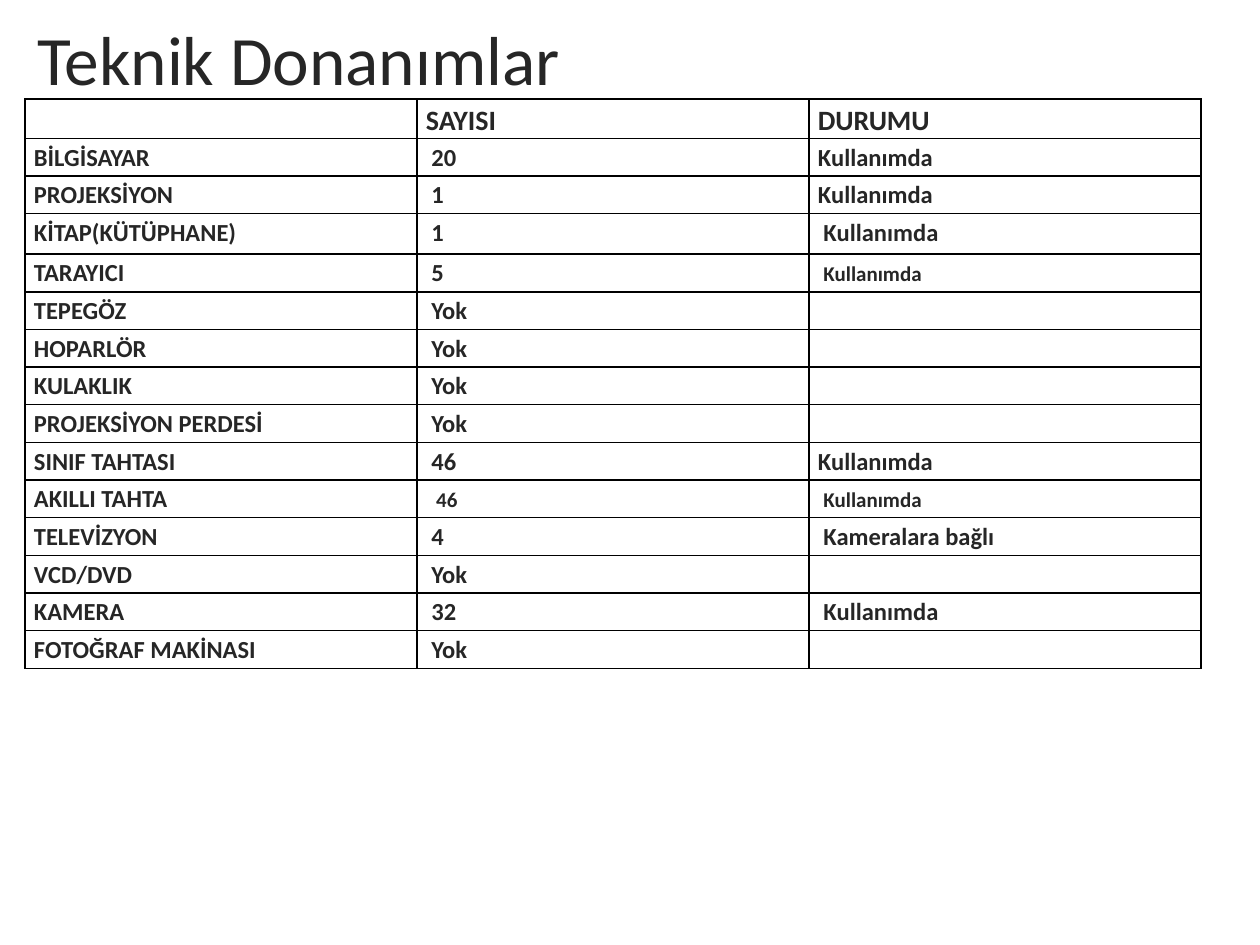
from lxml import etree
from pptx import Presentation
from pptx.dml.color import RGBColor
from pptx.enum.text import MSO_ANCHOR
from pptx.oxml.ns import qn
from pptx.util import Pt

MIDDLE = MSO_ANCHOR.MIDDLE
FONT = "Calibri"
TEXT_COLOR = "262626"
BORDER_COLOR = "000000"
HEADER_SIZE, BODY_SIZE, SMALL_SIZE = 16, 14, 12
ROW_HEIGHT, TALL_ROW_HEIGHT, TALL_ROW = 21.54, 23.1, 3

# A cell is a string, or a list of (text, size) runs.
SMALL_IN_USE = [(" ", BODY_SIZE), ("Kullanımda", SMALL_SIZE)]
EQUIPMENT = [
    ("", "SAYISI", "DURUMU"),
    ("BİLGİSAYAR", " 20", "Kullanımda"),
    ("PROJEKSİYON", " 1", "Kullanımda"),
    ("KİTAP(KÜTÜPHANE)", " 1", " Kullanımda"),
    ("TARAYICI", " 5", SMALL_IN_USE),
    ("TEPEGÖZ", " Yok", ""),
    ("HOPARLÖR", " Yok", ""),
    ("KULAKLIK", " Yok", ""),
    ("PROJEKSİYON PERDESİ", " Yok", ""),
    ("SINIF TAHTASI", " 46", "Kullanımda"),
    ("AKILLI TAHTA", [(" ", BODY_SIZE), (" 46", SMALL_SIZE)], SMALL_IN_USE),
    ("TELEVİZYON", " 4", " Kameralara bağlı"),
    ("VCD/DVD", " Yok", ""),
    ("KAMERA", " 32", " Kullanımda"),
    ("FOTOĞRAF MAKİNASI", " Yok", ""),
]


def color(hex_string):
    return RGBColor.from_string(hex_string)


def add_run(paragraph, text, size, bold=False):
    run = paragraph.add_run()
    run.text = text
    run.font.name = FONT
    run.font.size = Pt(size)
    run.font.bold = bold
    run.font.color.rgb = color(TEXT_COLOR)


def set_borders(cell, width=1):
    properties = cell._tc.get_or_add_tcPr()
    for index, side in enumerate(("lnL", "lnR", "lnT", "lnB")):
        line = etree.Element(qn(f"a:{side}"), w=str(Pt(width)))
        fill = etree.SubElement(line, qn("a:solidFill"))
        etree.SubElement(fill, qn("a:srgbClr"), val=BORDER_COLOR)
        properties.insert(index, line)


def fill_cell(cell, content, size):
    cell.margin_left = cell.margin_right = Pt(5.2)
    cell.margin_top = cell.margin_bottom = 0
    cell.fill.background()
    set_borders(cell)
    paragraph = cell.text_frame.paragraphs[0]
    paragraph.line_spacing = 1.15
    runs = [(content, size)] if isinstance(content, str) else content
    for text, run_size in runs:
        add_run(paragraph, text, run_size, bold=True)


def add_title(slide, left, top, width, height):
    box = slide.shapes.add_textbox(Pt(left), Pt(top), Pt(width), Pt(height))
    frame = box.text_frame
    frame.word_wrap = True
    frame.vertical_anchor = MIDDLE
    add_run(frame.paragraphs[0], "Teknik Donanımlar", 39.6)


def add_equipment_table(slide, left, top, width):
    column_count = len(EQUIPMENT[0])
    height = ROW_HEIGHT * (len(EQUIPMENT) - 1) + TALL_ROW_HEIGHT
    table = slide.shapes.add_table(
        len(EQUIPMENT), column_count, Pt(left), Pt(top), Pt(width), Pt(height)
    ).table
    for column in table.columns:
        column.width = Pt(width / column_count)
    for row_index, contents in enumerate(EQUIPMENT):
        row_height = TALL_ROW_HEIGHT if row_index == TALL_ROW else ROW_HEIGHT
        table.rows[row_index].height = Pt(row_height)
        size = HEADER_SIZE if row_index == 0 else BODY_SIZE
        for column_index, content in enumerate(contents):
            fill_cell(table.cell(row_index, column_index), content, size)


def main():
    presentation = Presentation()
    presentation.slide_width = Pt(720)
    presentation.slide_height = Pt(540)
    slide = presentation.slides.add_slide(presentation.slide_layouts[6])
    add_equipment_table(slide, 14.2, 56.6, 672)
    add_title(slide, 14.2, 5.8, 682, 54)
    presentation.save("out.pptx")


if __name__ == "__main__":
    main()
